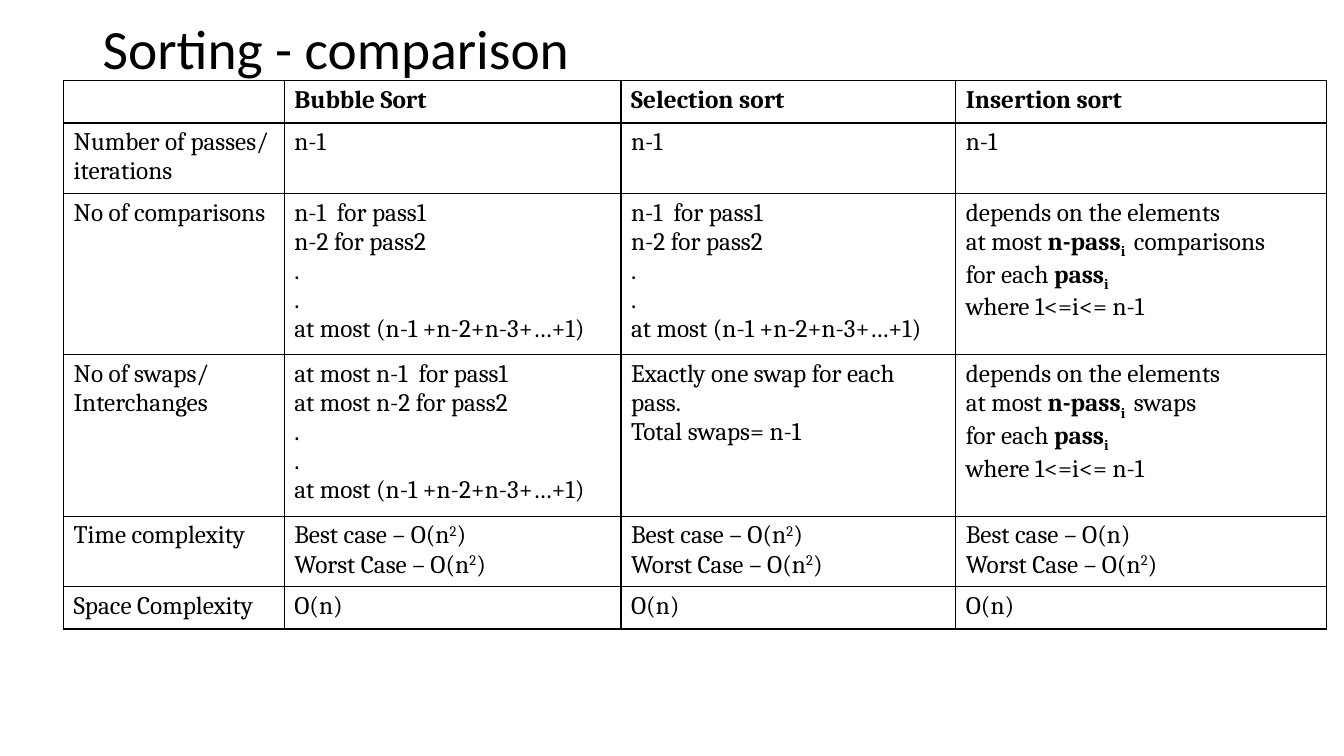
import dataclasses

import lxml.etree
import pptx
import pptx.dml.color
import pptx.enum.text
import pptx.oxml.ns
import pptx.util

Inches = pptx.util.Inches


@dataclasses.dataclass(frozen=True)
class Theme:
    """Colours, fonts and sizes of the slide."""
    ink: str = "000000"
    title_font: str = "Calibri"
    body_font: str = "Cambria"
    title_size: float = 39.6
    body_size: float = 18
    border: float = 1


THEME = Theme()

SQUARED = ("2", {"base": 30})
BEST_N2 = ["Best case – O(n", SQUARED, ")"]
WORST_N2 = ["Worst Case – O(n", SQUARED, ")"]
AT_MOST = [".", ".", "at most (n-1 +n-2+n-3+…+1)"]
PASSES = ["n-1  for pass1", "n-2 for pass2"] + AT_MOST


def insertion_lines(action):
    """Return the lines that bound an action of insertion sort."""
    bold, sub = {"bold": True}, {"bold": True, "base": -25}
    return [
        "depends on the elements",
        ["at most ", ("n-pass", bold), ("i ", sub), f" {action}"],
        ["for each ", ("pass", bold), ("i", sub)],
        "where 1<=i<= n-1",
    ]


HEADERS = ["", "Bubble Sort", "Selection sort", "Insertion sort"]
ROWS = [
    [[[(header, {"bold": True})]] for header in HEADERS],
    [["Number of passes/ iterations"]] + [["n-1"]] * 3,
    [["No of comparisons"], PASSES, PASSES, insertion_lines("comparisons")],
    [
        ["No of swaps/ Interchanges"],
        ["at most n-1  for pass1", "at most n-2 for pass2"] + AT_MOST,
        ["Exactly one swap for each pass.", "Total swaps= n-1"],
        insertion_lines("swaps"),
    ],
    [
        ["Time complexity"],
        [BEST_N2, WORST_N2],
        [BEST_N2, WORST_N2],
        ["Best case – O(n)", WORST_N2],
    ],
    [["Space Complexity"]] + [["O(n)"]] * 3,
]


def add_run(p, text, font=THEME.body_font, size=THEME.body_size, bold=False, base=0):
    """Append a formatted run to a paragraph."""
    r = p.add_run()
    r.text = text
    r.font.name = font
    r.font.size = pptx.util.Pt(size)
    r.font.bold = bold
    r.font.color.rgb = pptx.dml.color.RGBColor.from_string(THEME.ink)
    if base:
        r._r.get_or_add_rPr().set("baseline", str(base * 1000))


def fill_lines(tf, lines):
    """Write each line as a paragraph of plain or formatted runs."""
    for i, line in enumerate(lines):
        p = tf.add_paragraph() if i else tf.paragraphs[0]
        for part in [line] if isinstance(line, str) else line:
            text, style = (part, {}) if isinstance(part, str) else part
            add_run(p, text, **style)


def set_borders(cell):
    """Draw a solid line on all four sides of a cell."""
    tc_pr = cell._tc.get_or_add_tcPr()
    qn = pptx.oxml.ns.qn
    for i, side in enumerate(("lnL", "lnR", "lnT", "lnB")):
        ln = lxml.etree.Element(qn(f"a:{side}"), w=str(pptx.util.Pt(THEME.border)))
        solid = lxml.etree.SubElement(ln, qn("a:solidFill"))
        lxml.etree.SubElement(solid, qn("a:srgbClr"), val=THEME.ink)
        tc_pr.insert(i, ln)


def add_title(s, left, top, width, height):
    """Place the slide title in its box."""
    tf = s.shapes.add_textbox(left, top, width, height).text_frame
    tf.word_wrap = True
    tf.vertical_anchor = pptx.enum.text.MSO_ANCHOR.MIDDLE
    p = tf.paragraphs[0]
    p.line_spacing = 0.9
    add_run(p, "Sorting - comparison", font=THEME.title_font, size=THEME.title_size)


def add_comparison(s, left, top, width, height):
    """Place the table comparing the three sorts in its box."""
    frame = s.shapes.add_table(len(ROWS), len(HEADERS), left, top, width, height)
    table = frame.table
    table.first_row = table.horz_banding = False
    shares = (2.19, 3.34, 3.32, 3.68)
    for column, share in zip(table.columns, shares):
        column.width = int(width * share / sum(shares))
    for row, contents in zip(table.rows, ROWS):
        for cell, lines in zip(row.cells, contents):
            cell.fill.background()
            set_borders(cell)
            fill_lines(cell.text_frame, lines)


def main():
    """Build and save the slide."""
    prs = pptx.Presentation()
    prs.slide_width, prs.slide_height = Inches(13.33), Inches(7.5)
    s = prs.slides.add_slide(prs.slide_layouts[6])
    add_title(s, Inches(0.92), Inches(0.23), Inches(11.5), Inches(0.57))
    add_comparison(s, Inches(0.63), Inches(0.8), Inches(12.53), Inches(2.52))
    prs.save("out.pptx")


if __name__ == "__main__":
    main()
